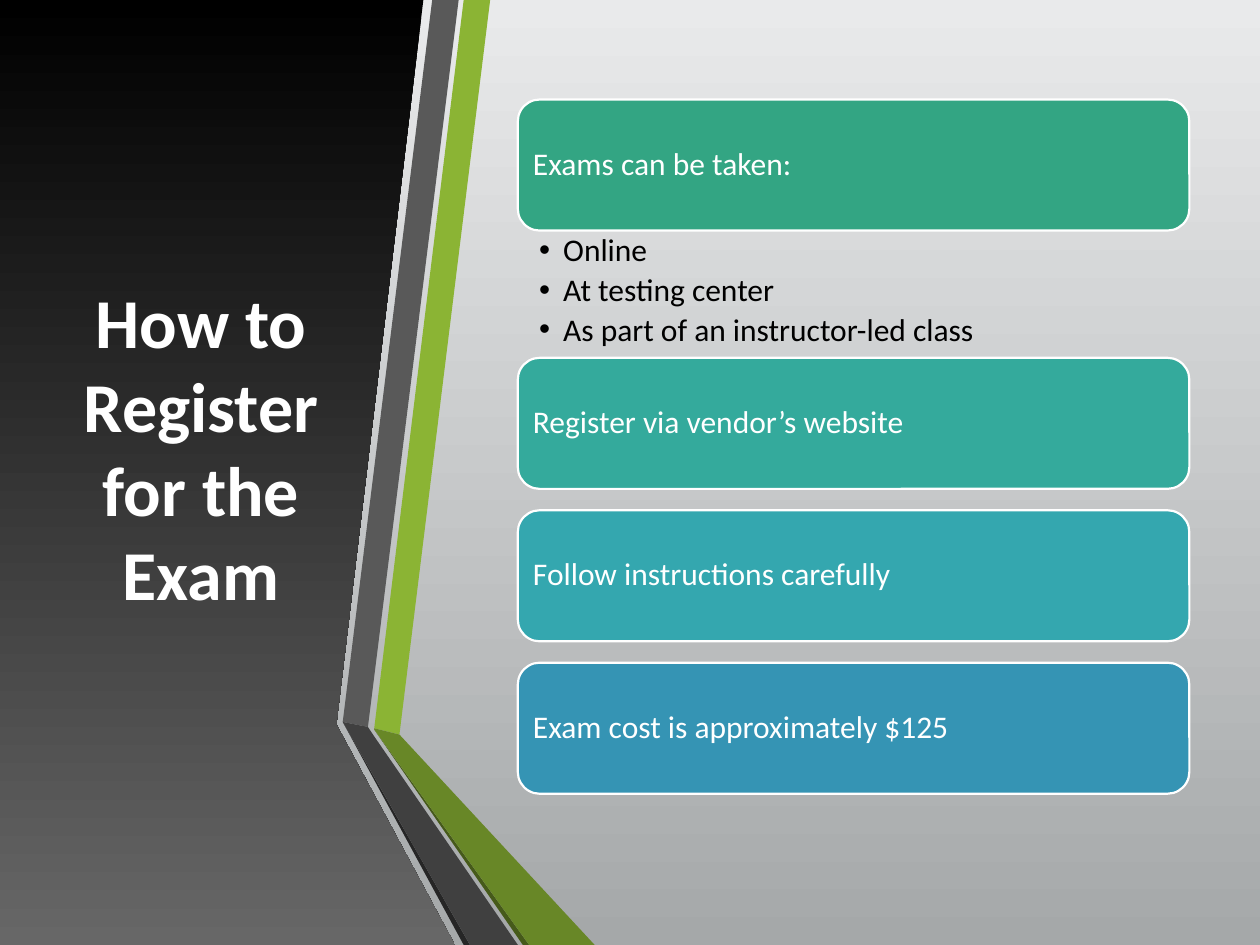
from pptx import Presentation
from pptx.dml.color import RGBColor
from pptx.enum.shapes import MSO_SHAPE
from pptx.enum.text import MSO_ANCHOR, PP_ALIGN
from pptx.oxml.ns import qn
from pptx.util import Inches, Pt
from lxml.etree import SubElement

WHITE = "FFFFFF"
BLACK = "000000"

PANEL_OUTLINE = [(0, 0), (3.36, 0), (2.67, 5.75), (3.61, 7.5), (0, 7.5)]
RIBBON = [
    ("8BB434", [(2.97, 5.78), (3.17, 5.83), (3.89, 0), (3.68, 0)]),
    ("595959", [(3.64, 0), (3.43, 0), (2.72, 5.73), (2.92, 5.77)]),
    ("262626", [(2.72, 5.73), (3.68, 7.5), (3.73, 7.5)]),
    ("465A1A", [(2.97, 5.79), (4.15, 7.5), (4.2, 7.5)]),
    ("688727", [(2.97, 5.79), (4.2, 7.5), (4.72, 7.5), (3.17, 5.83), (2.97, 5.78)]),
    ("404040", [(4.11, 7.5), (2.96, 5.83), (2.92, 5.77), (2.72, 5.73), (3.73, 7.5)]),
]

CARD_LEFT, CARD_TOP = 4.11, 0.79
CARD_WIDTH, CARD_HEIGHT = 5.33, 1.04
CARD_GAP, LIST_HEIGHT = 0.17, 1.01
CARDS = [
    ("Exams can be taken:", "33A583",
     ["Online", "At testing center", "As part of an instructor-led class"]),
    ("Register via vendor’s website", "34AA9C", []),
    ("Follow instructions carefully", "34A7AF", []),
    ("Exam cost is approximately $125", "3594B4", []),
]


def color(hex_code):
    return RGBColor.from_string(hex_code)


def paint_gradient(fill, top, bottom):
    fill.gradient()
    fill.gradient_angle = 270
    for stop, hex_code in zip(fill.gradient_stops, (top, bottom)):
        stop.color.rgb = color(hex_code)


def write(frame, lines, size=18, ink=WHITE, bold=False, align=PP_ALIGN.LEFT,
          anchor=MSO_ANCHOR.MIDDLE, margins=(0.1, 0.05, 0.1, 0.05),
          line_spacing=None, after=0, bullet_indent=None):
    """Fill a text frame with one paragraph per line; margins run left, top, right, bottom."""
    frame.word_wrap = True
    frame.vertical_anchor = anchor
    (frame.margin_left, frame.margin_top,
     frame.margin_right, frame.margin_bottom) = map(Inches, margins)
    for index, line in enumerate(lines):
        para = frame.add_paragraph() if index else frame.paragraphs[0]
        para.alignment = align
        para.line_spacing = line_spacing
        para.space_after = Pt(after)
        if bullet_indent:
            properties = para._p.get_or_add_pPr()
            properties.set("marL", str(Inches(bullet_indent)))
            properties.set("indent", str(-Inches(bullet_indent)))
            SubElement(properties, qn("a:buFont"), typeface="Arial")
            SubElement(properties, qn("a:buChar"), char="•")
        span = para.add_run()
        span.text = line
        span.font.name = "Calibri"
        span.font.size = Pt(size)
        span.font.bold = bold
        span.font.color.rgb = color(ink)


class SlideBuilder:
    """Draws the elements of this design on one slide."""

    def __init__(self, slide):
        self.slide = slide
        self.shapes = slide.shapes

    def background(self, top, bottom):
        paint_gradient(self.slide.background.fill, top, bottom)

    def outline(self, points):
        """Add a closed polygon without a line."""
        start, *rest = [(Inches(x), Inches(y)) for x, y in points]
        builder = self.shapes.build_freeform(*start)
        builder.add_line_segments(rest, close=True)
        shape = builder.convert_to_shape()
        shape.shadow.inherit = False
        shape.line.fill.background()
        return shape

    def panel(self, points, top, bottom):
        paint_gradient(self.outline(points).fill, top, bottom)

    def stripe(self, points, fill):
        shape = self.outline(points)
        shape.fill.solid()
        shape.fill.fore_color.rgb = color(fill)

    def text(self, left, top, width, height, lines, **style):
        box = self.shapes.add_textbox(*map(Inches, (left, top, width, height)))
        write(box.text_frame, lines, **style)

    def card(self, top, caption, fill):
        card = self.shapes.add_shape(
            MSO_SHAPE.ROUNDED_RECTANGLE,
            *map(Inches, (CARD_LEFT, top, CARD_WIDTH, CARD_HEIGHT)))
        card.shadow.inherit = False
        card.fill.solid()
        card.fill.fore_color.rgb = color(fill)
        card.line.color.rgb = color(WHITE)
        card.line.width = Pt(1.25)
        write(card.text_frame, [caption], margins=(0.07,) * 4,
              line_spacing=0.9, after=6.3)

    def bullets(self, top, items):
        self.text(CARD_LEFT, top, CARD_WIDTH, LIST_HEIGHT, items, ink=BLACK,
                  anchor=MSO_ANCHOR.TOP, margins=(0.17, 0.03, 0.14, 0.03),
                  line_spacing=0.9, after=3.3, bullet_indent=0.19)


def main():
    deck = Presentation()
    deck.slide_width, deck.slide_height = Inches(10), Inches(7.5)
    page = SlideBuilder(deck.slides.add_slide(deck.slide_layouts[6]))

    page.background("E9EAEB", "A5A8A9")
    page.panel(PANEL_OUTLINE, BLACK, "676767")
    page.text(0.44, 0.75, 2.31, 5.58, ["How to Register for the Exam"],
              size=40, bold=True, align=PP_ALIGN.CENTER)
    for fill, points in RIBBON:
        page.stripe(points, fill)

    top = CARD_TOP
    for caption, fill, items in CARDS:
        page.card(top, caption, fill)
        top += CARD_HEIGHT
        if items:
            page.bullets(top, items)
        top += LIST_HEIGHT if items else CARD_GAP

    deck.save("out.pptx")


if __name__ == "__main__":
    main()
